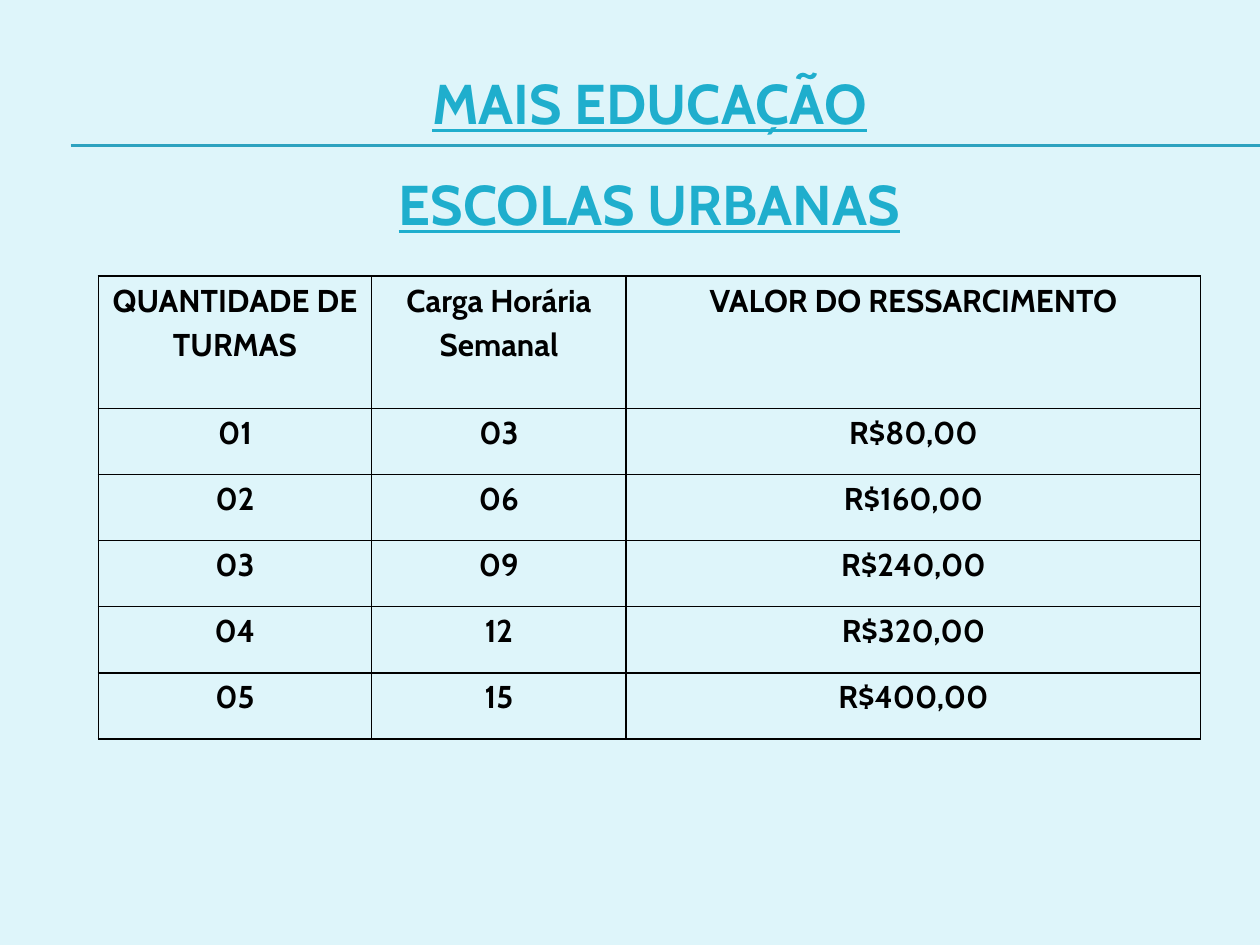
import dataclasses

import lxml.etree
import pptx
import pptx.dml.color
import pptx.enum.shapes
import pptx.enum.text
import pptx.oxml.ns
import pptx.util

GRID_COLUMNS = 100
GRID_ROWS = 75
CELL_SIZE = pptx.util.Inches(0.1)
TITLE_ONLY_LAYOUT = 5

TITLE_LINES = ["MAIS EDUCAÇÃO", "ESCOLAS URBANAS"]
HEADINGS = ["QUANTIDADE DE TURMAS", "Carga Horária Semanal", "VALOR DO RESSARCIMENTO"]
CLASS_COUNTS = range(1, 6)
HOURS_PER_CLASS = 3
REFUND_PER_CLASS = 80


@dataclasses.dataclass(frozen=True)
class Theme:
    font: str = "Cabin"
    background: str = "DEF5FA"
    accent: str = "1FAECD"
    rule: str = "2DA2BF"
    ink: str = "000000"
    title_size: int = 32
    table_size: int = 18
    rule_width: float = 0.75
    border_width: float = 1


THEME = Theme()


def grid(units):
    return round(units * CELL_SIZE)


def color(value):
    return pptx.dml.color.RGBColor.from_string(value)


def apply_format(target, values):
    for name, value in values.items():
        setattr(target, name, value)


def format_paragraph(paragraph, line_spacing, size, text_color, underline=False):
    apply_format(paragraph, {
        "alignment": pptx.enum.text.PP_ALIGN.CENTER,
        "line_spacing": line_spacing,
        "space_before": pptx.util.Pt(0),
    })
    for run in paragraph.runs:
        apply_format(run.font, {
            "name": THEME.font,
            "size": pptx.util.Pt(size),
            "bold": True,
            "underline": underline,
        })
        run.font.color.rgb = color(text_color)


def add_rule(slide, row):
    rule = slide.shapes.add_connector(
        pptx.enum.shapes.MSO_CONNECTOR.STRAIGHT,
        grid(5.6), grid(row), grid(GRID_COLUMNS), grid(row))
    rule.line.color.rgb = color(THEME.rule)
    rule.line.width = pptx.util.Pt(THEME.rule_width)
    lxml.etree.SubElement(rule.element.spPr, pptx.oxml.ns.qn("a:effectLst"))


def fill_title(slide):
    title = slide.shapes.title
    apply_format(title, {
        "left": grid(15.6),
        "top": grid(2.3),
        "width": grid(71.9),
        "height": grid(16.2),
    })
    frame = title.text_frame
    frame.text = "\n".join(TITLE_LINES)
    apply_format(frame, {
        "word_wrap": True,
        "auto_size": pptx.enum.text.MSO_AUTO_SIZE.NONE,
        "vertical_anchor": pptx.enum.text.MSO_ANCHOR.TOP,
    })
    for paragraph in frame.paragraphs:
        format_paragraph(paragraph, 1.5, THEME.title_size, THEME.accent, underline=True)


def add_borders(cell):
    properties = cell._tc.get_or_add_tcPr()
    qualified = pptx.oxml.ns.qn
    for side in ("a:lnL", "a:lnR", "a:lnT", "a:lnB"):
        border = lxml.etree.SubElement(
            properties, qualified(side), w=str(pptx.util.Pt(THEME.border_width)))
        fill = lxml.etree.SubElement(border, qualified("a:solidFill"))
        lxml.etree.SubElement(fill, qualified("a:srgbClr"), val=THEME.ink)


def format_cell(cell, text):
    cell.text = text
    apply_format(cell, {
        "margin_left": grid(0.7),
        "margin_right": grid(0.7),
        "margin_top": 0,
        "margin_bottom": 0,
    })
    add_borders(cell)
    cell.fill.background()
    for paragraph in cell.text_frame.paragraphs:
        format_paragraph(paragraph, 1.15, THEME.table_size, THEME.ink)


def add_refund_table(slide):
    records = [HEADINGS] + [
        [f"{count:02}", f"{count * HOURS_PER_CLASS:02}", f"R${count * REFUND_PER_CLASS},00"]
        for count in CLASS_COUNTS
    ]
    widths = [21.7, 20.2, 45.6]
    heights = [10.5] + [5.25] * len(CLASS_COUNTS)
    table = slide.shapes.add_table(
        len(records), len(widths), grid(7.8), grid(21.9),
        grid(sum(widths)), grid(sum(heights))).table
    apply_format(table, {"first_row": False, "horz_banding": False})
    for column, width in zip(table.columns, widths):
        column.width = grid(width)
    for row, height, record in zip(table.rows, heights, records):
        row.height = grid(height)
        for cell, text in zip(row.cells, record):
            format_cell(cell, text)


def main():
    presentation = pptx.Presentation()
    apply_format(presentation, {
        "slide_width": grid(GRID_COLUMNS),
        "slide_height": grid(GRID_ROWS),
    })
    slide = presentation.slides.add_slide(presentation.slide_layouts[TITLE_ONLY_LAYOUT])
    slide.background.fill.solid()
    slide.background.fill.fore_color.rgb = color(THEME.background)
    for row in (11.5, 11.6):
        add_rule(slide, row)
    fill_title(slide)
    add_refund_table(slide)
    presentation.save("out.pptx")


if __name__ == "__main__":
    main()
